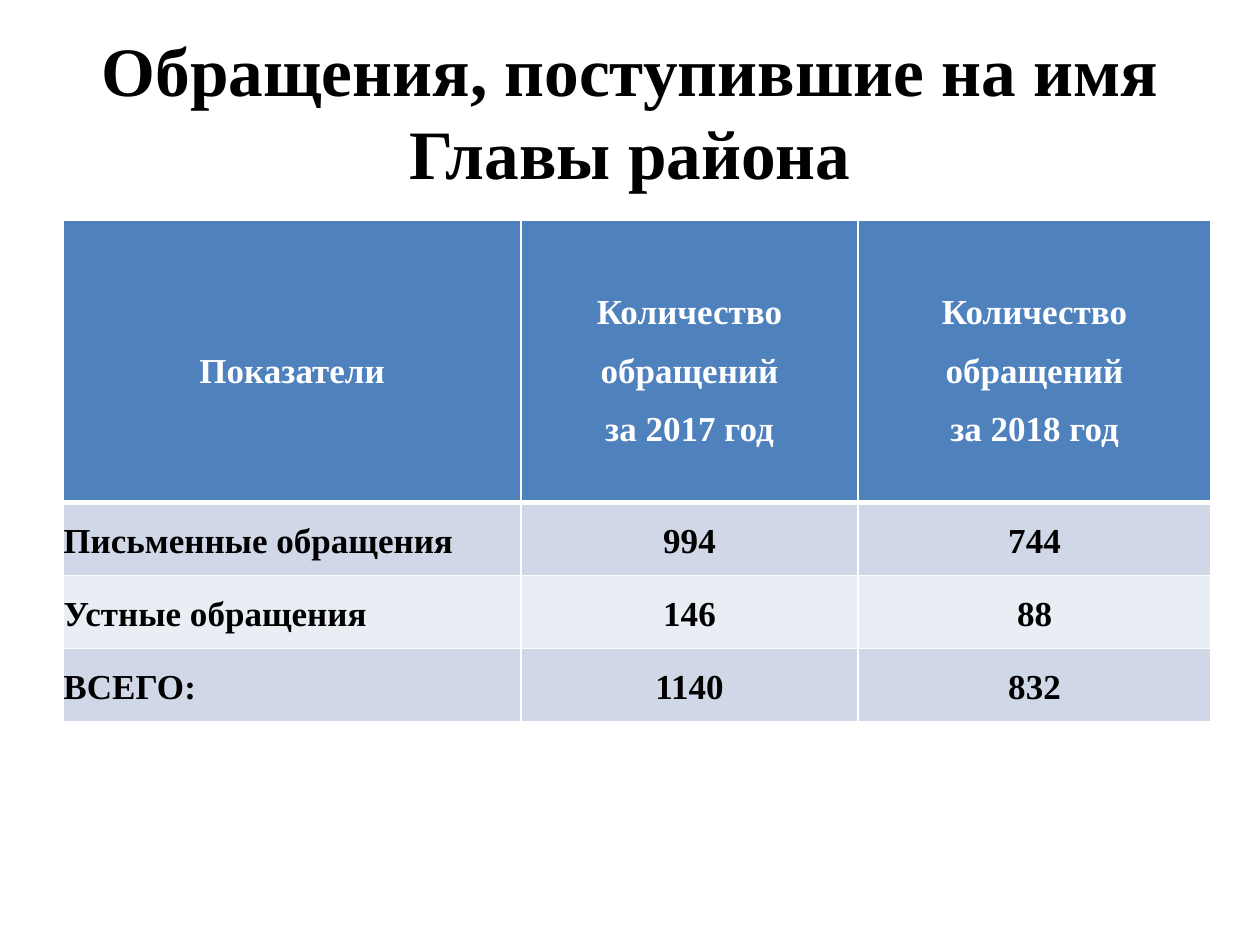
from dataclasses import dataclass

from lxml import etree
from pptx import Presentation
from pptx import util as u
from pptx.dml.color import RGBColor
from pptx.enum import text
from pptx.oxml.ns import qn

FONT = "Times New Roman"
BLACK = RGBColor(0x00, 0x00, 0x00)
WHITE = RGBColor(0xFF, 0xFF, 0xFF)
BLUE = RGBColor(0x4F, 0x81, 0xBD)
BAND_DARK = RGBColor(0xD0, 0xD8, 0xE8)
BAND_LIGHT = RGBColor(0xE9, 0xED, 0xF4)

TITLE = "Обращения, поступившие на имя Главы района"
COLUMN_WIDTHS = (u.Cm(9.22), u.Cm(6.8), u.Cm(7.11))
HEADER_HEIGHT, ROW_HEIGHT = u.Cm(5.68), u.Cm(1.47)
THIN, THICK = u.Pt(1), u.Pt(3)


@dataclass(frozen=True)
class Row:
    cells: tuple[str, ...]
    fill: RGBColor
    color: RGBColor = BLACK
    header: bool = False
    number_indent: float = 0


ROWS = (
    Row(("Показатели", "Количество обращений\nза 2017 год",
         "Количество обращений\nза 2018 год"), BLUE, WHITE, header=True),
    Row(("Письменные обращения", "994", "744"), BAND_DARK, number_indent=-0.13),
    Row(("Устные обращения", "146", "88"), BAND_LIGHT, number_indent=-0.13),
    Row(("ВСЕГО:", "1140", "832"), BAND_DARK),
)


def add_run(para, words: str, size: float, color: RGBColor) -> None:
    span = para.add_run()
    span.text = words
    span.font.name = FONT
    span.font.size = u.Pt(size)
    span.font.bold = True
    span.font.color.rgb = color


def set_borders(cell, top: int, bottom: int) -> None:
    """Give the cell white borders; they must precede its fill in the XML."""
    properties = cell._tc.get_or_add_tcPr()
    widths = {"a:lnL": THIN, "a:lnR": THIN, "a:lnT": top, "a:lnB": bottom}
    for position, (tag, width) in enumerate(widths.items()):
        line = etree.Element(qn(tag), w=str(int(width)))
        fill = etree.SubElement(line, qn("a:solidFill"))
        etree.SubElement(fill, qn("a:srgbClr"), val=str(WHITE))
        properties.insert(position, line)


def fill_cell(cell, words: str, row: Row, column: int, top: int, bottom: int) -> None:
    cell.margin_left = cell.margin_right = cell.margin_top = cell.margin_bottom = 0
    cell.vertical_anchor = text.MSO_ANCHOR.MIDDLE if row.header else text.MSO_ANCHOR.TOP
    cell.fill.solid()
    cell.fill.fore_color.rgb = row.fill
    set_borders(cell, top, bottom)
    frame = cell.text_frame
    centred = row.header or column > 0
    for index, line in enumerate(words.split("\n")):
        para = frame.add_paragraph() if index else frame.paragraphs[0]
        para.alignment = text.PP_ALIGN.CENTER if centred else text.PP_ALIGN.LEFT
        para.line_spacing = 1.5
        if column and row.number_indent:
            para._p.get_or_add_pPr().set("indent", str(int(u.Cm(row.number_indent))))
        add_run(para, line, 20, row.color)


def add_title(slide) -> None:
    title = slide.shapes.title
    title.left, title.top = u.Cm(1.27), u.Cm(0.53)
    title.width, title.height = u.Cm(22.86), u.Cm(3.4)
    frame = title.text_frame
    frame.word_wrap = True
    frame.auto_size = text.MSO_AUTO_SIZE.NONE
    frame.vertical_anchor = text.MSO_ANCHOR.MIDDLE
    para = frame.paragraphs[0]
    para.alignment = text.PP_ALIGN.CENTER
    add_run(para, TITLE, 39.6, BLACK)


def add_appeals_table(slide) -> None:
    height = HEADER_HEIGHT + ROW_HEIGHT * (len(ROWS) - 1)
    table = slide.shapes.add_table(
        len(ROWS), len(COLUMN_WIDTHS), u.Cm(1.28), u.Cm(4.45),
        sum(COLUMN_WIDTHS), height).table
    for column, width in zip(table.columns, COLUMN_WIDTHS):
        column.width = width
    for index, row in enumerate(ROWS):
        table.rows[index].height = HEADER_HEIGHT if row.header else ROW_HEIGHT
        top = THICK if index and ROWS[index - 1].header else THIN
        bottom = THICK if row.header else THIN
        for column, words in enumerate(row.cells):
            fill_cell(table.cell(index, column), words, row, column, top, bottom)


def main() -> None:
    deck = Presentation()
    deck.slide_width, deck.slide_height = u.Cm(25.4), u.Cm(19.05)
    slide = deck.slides.add_slide(deck.slide_layouts[5])
    add_title(slide)
    add_appeals_table(slide)
    deck.save("out.pptx")


if __name__ == "__main__":
    main()
